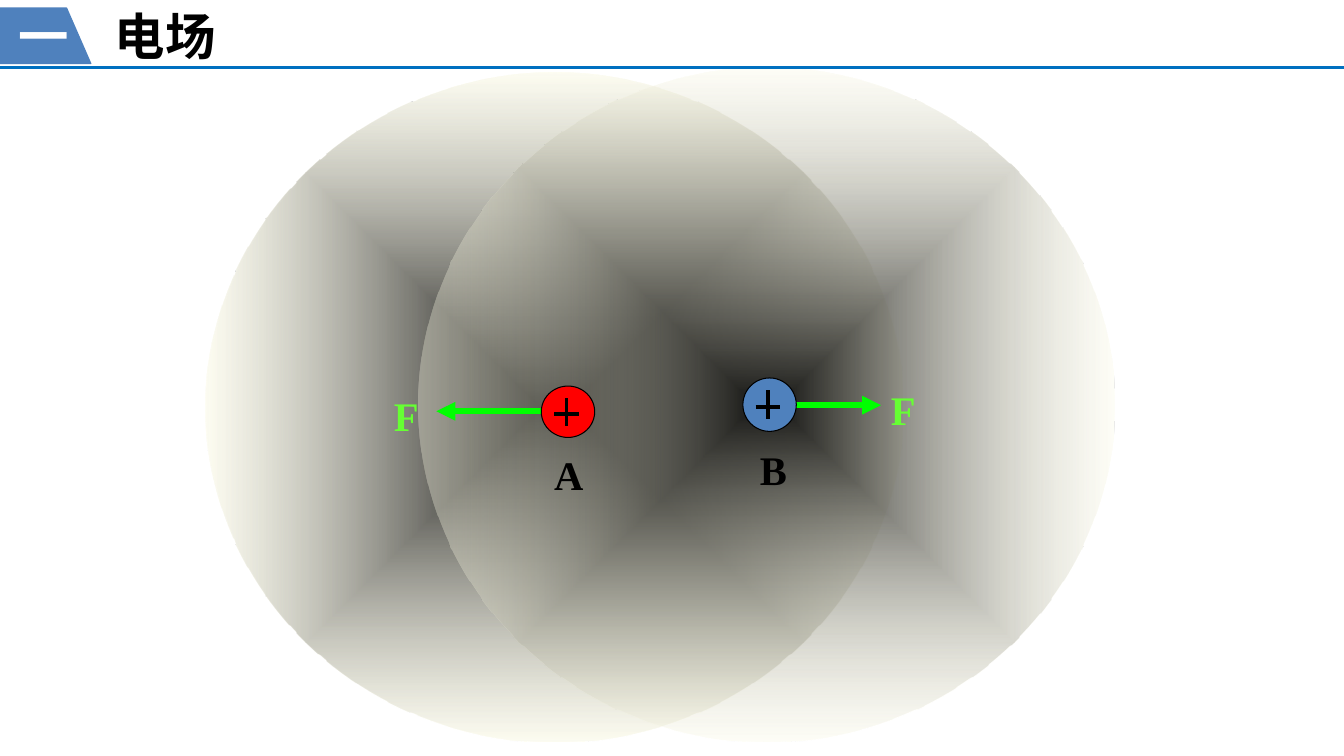
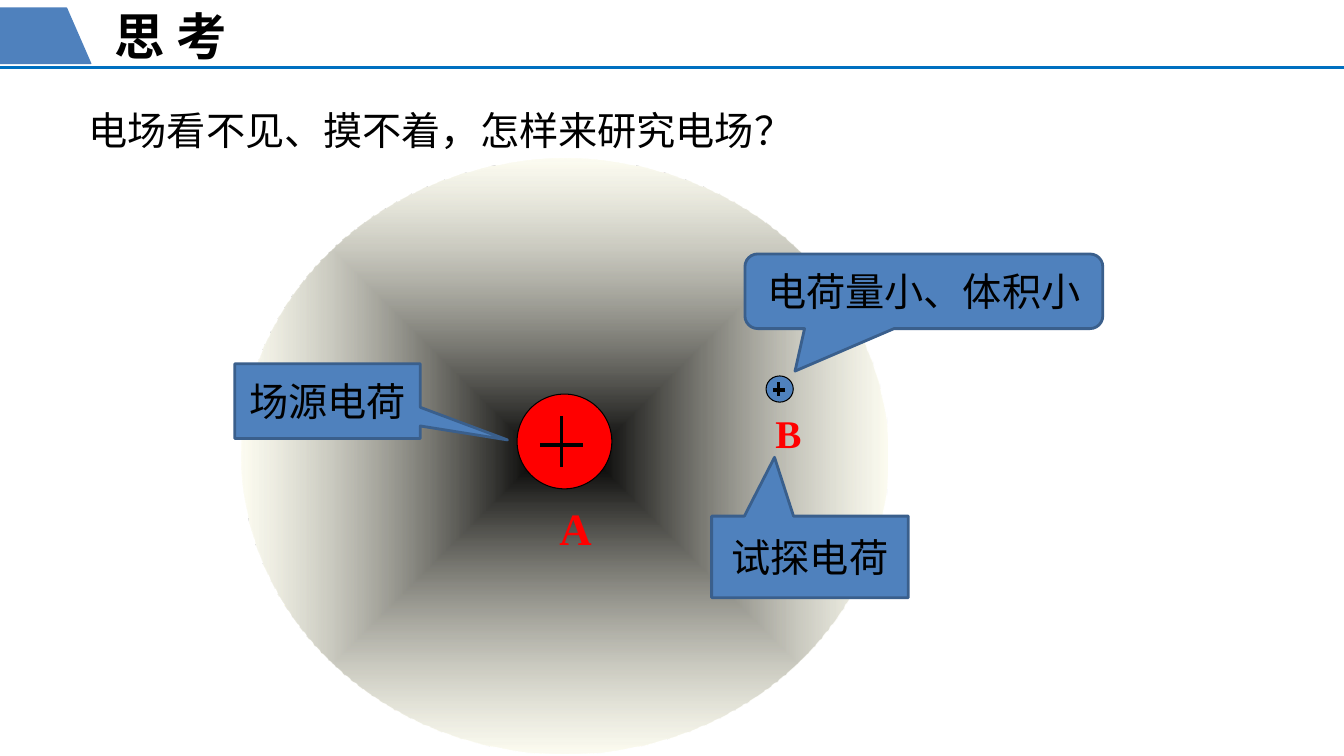
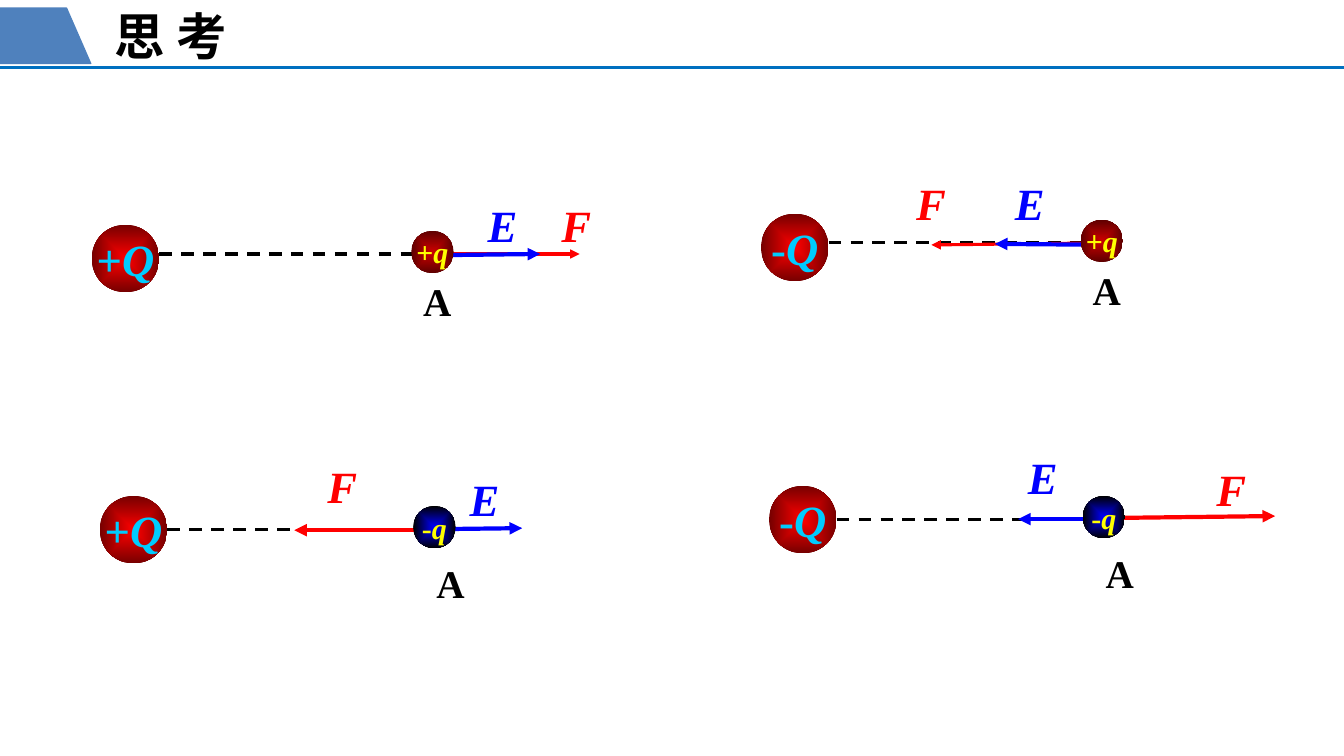
from dataclasses import dataclass
from typing import NamedTuple

from lxml.etree import SubElement
from pptx import Presentation
from pptx.dml.color import RGBColor
from pptx.enum.dml import MSO_LINE_DASH_STYLE as Dash
from pptx.enum.shapes import MSO_AUTO_SHAPE_TYPE as ShapeType, MSO_CONNECTOR_TYPE as ConnectorType
from pptx.enum.text import MSO_ANCHOR as Anchor, MSO_AUTO_SIZE as AutoSize, PP_ALIGN as Align
from pptx.oxml import parse_xml
from pptx.oxml.ns import nsdecls, qn
from pptx.shapes.autoshape import Shape
from pptx.slide import Slide
from pptx.text.text import TextFrame
from pptx.util import Emu, Inches, Pt

# The grid has square cells, ten to the inch.
COLUMNS, ROWS = 133.33, 75

BLUE, RULE_BLUE, CALLOUT_EDGE = "4F81BD", "0070C0", "3A5F8C"
BLACK, WHITE, RED, GREEN, LIME = "000000", "FFFFFF", "FF0000", "00FF00", "66FF33"
FIELD_BLUE, CYAN, YELLOW, IVORY = "0000FF", "00CCFF", "FFFF00", "FBFAE5"
SERIF, SANS, NUMERAL_FONT = "Times New Roman", "Arial", "Montserrat"


class Box(NamedTuple):
    left: float
    top: float
    width: float
    height: float


class Stop(NamedTuple):
    color: str
    opacity: int = 100


class Run(NamedTuple):
    text: str
    size: float
    color: str = BLACK
    bold: bool = True
    italic: bool = False
    font: str = SERIF


class Arrow(NamedTuple):
    x1: float
    y1: float
    x2: float
    y2: float
    width: float = 3


@dataclass(frozen=True)
class Charge:
    """A positive point charge with its name below."""
    body: Box
    color: str
    name: Run
    name_box: Box


@dataclass(frozen=True)
class Callout:
    kind: ShapeType
    box: Box
    adjustments: tuple[float, ...]
    text: str


@dataclass(frozen=True)
class RowLayout:
    """Offsets from the corner of the source charge."""
    axis_y: float
    probe: tuple[float, float]
    point_name: tuple[float, float]


@dataclass(frozen=True)
class ForceCase:
    source_sign: str
    probe_sign: str
    corner: tuple[float, float]
    layout: RowLayout
    force: Arrow
    field: Arrow
    force_name: tuple[float, float]
    field_name: tuple[float, float]


def grid(cells: float) -> Emu:
    return Inches(cells / 10)


def place(box: Box) -> list[Emu]:
    return [grid(cells) for cells in box]


def rgb(color: str) -> RGBColor:
    return RGBColor.from_string(color)


def write(frame: TextFrame, runs: list[Run], align: Align = Align.LEFT,
          line_spacing: float | None = None) -> None:
    paragraph = frame.paragraphs[0]
    paragraph.alignment = align
    if line_spacing:
        paragraph.line_spacing = line_spacing
    for item in runs:
        run = paragraph.add_run()
        run.text = item.text
        font = run.font
        font.name, font.size = item.font, Pt(item.size)
        font.bold, font.italic = item.bold, item.italic
        font.color.rgb = rgb(item.color)


def set_margins(frame: TextFrame) -> None:
    frame.margin_left = frame.margin_right = Inches(0.12)
    frame.margin_top = frame.margin_bottom = Inches(0.06)


def add_text(slide: Slide, box: Box, run: Run, wrap: bool = True, grow: bool = True,
             line_spacing: float | None = None) -> TextFrame:
    frame = slide.shapes.add_textbox(*place(box)).text_frame
    frame.word_wrap = wrap
    frame.auto_size = AutoSize.SHAPE_TO_FIT_TEXT if grow else AutoSize.NONE
    write(frame, [run], line_spacing=line_spacing)
    return frame


def paint(shape: Shape, fill: str, line: str, width: float) -> None:
    shape.shadow.inherit = False
    shape.fill.solid()
    shape.fill.fore_color.rgb = rgb(fill)
    shape.line.color.rgb = rgb(line)
    shape.line.width = Pt(width)


def add_glow(slide: Slide, box: Box, inner: Stop, outer: Stop) -> Shape:
    """Draw an ellipse shaded from its centre to its edge."""
    ellipse = slide.shapes.add_shape(ShapeType.OVAL, *place(box))
    ellipse.shadow.inherit = False
    ellipse.line.fill.background()
    stops = "".join(
        f'<a:gs pos="{position}"><a:srgbClr val="{stop.color}">'
        f'<a:alpha val="{stop.opacity * 1000}"/></a:srgbClr></a:gs>'
        for position, stop in ((0, inner), (100000, outer)))
    gradient = parse_xml(
        f'<a:gradFill {nsdecls("a")} rotWithShape="1"><a:gsLst>{stops}</a:gsLst>'
        '<a:path path="shape"><a:fillToRect l="50000" t="50000" r="50000" b="50000"/>'
        '</a:path></a:gradFill>')
    ellipse.element.spPr.find(qn("a:prstGeom")).addnext(gradient)
    return ellipse


def add_line(slide: Slide, path_ends: Arrow, color: str, head: bool = False,
             dashed: bool = False) -> None:
    ends = [grid(cells) for cells in path_ends[:4]]
    connector = slide.shapes.add_connector(ConnectorType.STRAIGHT, *ends)
    connector.line.color.rgb = rgb(color)
    connector.line.width = Pt(path_ends.width)
    if dashed:
        connector.line.dash_style = Dash.DASH
    properties = connector.element.spPr
    if head:
        SubElement(properties.find(qn("a:ln")), qn("a:tailEnd"), type="triangle")
    SubElement(properties, qn("a:effectLst"))


def add_header(slide: Slide, title: str, numeral: str = "") -> None:
    add_text(slide, Box(10.4, 0, 111.4, 5.8), Run(title, 36), grow=False)
    builder = slide.shapes.build_freeform(grid(0), grid(0.8))
    corners = [(6.6, 0.8), (9, 6.3), (0, 6.3)]
    builder.add_line_segments([(grid(x), grid(y)) for x, y in corners])
    paint(builder.convert_to_shape(), BLUE, BLUE, 1)
    add_line(slide, Arrow(0, 6.7, COLUMNS, 6.7, 1.5), RULE_BLUE)
    if numeral:
        add_text(slide, Box(0.9, 0, 6.7, 4.6), Run(numeral, 36, WHITE, font=NUMERAL_FONT),
                 grow=False)


def add_charge(slide: Slide, charge: Charge) -> None:
    left, top, width, height = charge.body
    circle = slide.shapes.add_shape(ShapeType.OVAL, *place(charge.body))
    paint(circle, charge.color, BLACK, 0.75)
    center_x, center_y = left + 0.47 * width, top + height / 2
    bar_y = center_y + 0.04 * height
    arm_x, arm_y = 0.23 * width, 0.27 * height
    add_line(slide, Arrow(center_x - arm_x, bar_y, center_x + arm_x, bar_y), BLACK)
    add_line(slide, Arrow(center_x, center_y - arm_y, center_x, center_y + arm_y, 2.25), BLACK)
    add_text(slide, charge.name_box, charge.name)


def add_callout(slide: Slide, callout: Callout) -> None:
    shape = slide.shapes.add_shape(callout.kind, *place(callout.box))
    for index, value in enumerate(callout.adjustments):
        shape.adjustments[index] = value
    paint(shape, BLUE, CALLOUT_EDGE, 2)
    frame = shape.text_frame
    frame.word_wrap, frame.vertical_anchor = True, Anchor.MIDDLE
    set_margins(frame)
    write(frame, [Run(callout.text, 28, bold=False)], Align.CENTER)


def add_ball(slide: Slide, box: Box, colors: tuple[str, str], sign: str, letter: str,
             size: float, text_color: str) -> None:
    ball = add_glow(slide, box, Stop(colors[0]), Stop(colors[1]))
    frame = ball.text_frame
    frame.word_wrap, frame.vertical_anchor = False, Anchor.MIDDLE
    write(frame, [Run(sign, size, text_color), Run(letter, size, text_color, italic=True)],
          Align.CENTER)


def add_force_case(slide: Slide, case: ForceCase) -> None:
    left, top = case.corner
    layout = case.layout
    source_size, probe_size, dash_length = 6.7, 4.2, 26.6
    dash_left, axis_y = left + source_size, top + layout.axis_y
    add_line(slide, Arrow(dash_left, axis_y, dash_left + dash_length, axis_y, 2.25), BLACK,
             dashed=True)
    vectors = (("F", case.force, case.force_name, RED),
               ("E", case.field, case.field_name, FIELD_BLUE))
    for letter, arrow, corner, color in vectors:
        add_line(slide, arrow, color, head=True)
        add_text(slide, Box(*corner, 5, 6.4), Run(letter, 31.9, color, italic=True), wrap=False)
    add_ball(slide, Box(left, top, source_size, source_size), (RED, "760000"),
             case.source_sign, "Q", 31.9, CYAN)
    probe_colors = ("CC0000", "5E0000") if case.probe_sign == "+" else (FIELD_BLUE, BLACK)
    probe_x, probe_y = layout.probe
    add_ball(slide, Box(left + probe_x, top + probe_y, probe_size, probe_size), probe_colors,
             case.probe_sign, "q", 21.4, YELLOW)
    name_x, name_y = layout.point_name
    add_text(slide, Box(left + name_x, top + name_y, 5.8, 5.7), Run("A", 28))


def build_field_slide(slide: Slide) -> None:
    add_glow(slide, Box(20.4, 7.2, 69.1, 66.4), Stop(BLACK), Stop(IVORY, 52))
    add_glow(slide, Box(41.5, 6.7, 69.1, 66.9), Stop("181816"), Stop(IVORY, 32))
    forces = ((Arrow(77.4, 40.2, 87.4, 40.2, 4.5), Box(87.4, 37.7, 7.8, 5.9)),
              (Arrow(53.7, 40.8, 43.3, 40.8, 4.5), Box(38.1, 38.3, 5.2, 5.9)))
    for arrow, name_box in forces:
        add_line(slide, arrow, GREEN, head=True)
        add_text(slide, name_box, Run("F", 29, LIME))
    charges = (
        Charge(Box(73.7, 37.5, 5.3, 5.3), BLUE, Run("B", 29), Box(74.4, 43.6, 3.3, 5.9)),
        Charge(Box(53.7, 38.3, 5.3, 5.1), RED, Run("A", 29), Box(54, 44.1, 3.3, 4.7)))
    for charge in charges:
        add_charge(slide, charge)
    add_header(slide, "电场", "一")


def build_probe_slide(slide: Slide) -> None:
    add_header(slide, "思 考")
    question = Run("电场看不见、摸不着，怎样来研究电场？", 28, bold=False, font=SANS)
    set_margins(add_text(slide, Box(7.6, 7.6, 85.9, 7.4), question, line_spacing=1.5))
    add_glow(slide, Box(24, 15.7, 64, 59), Stop(BLACK), Stop(IVORY, 52))
    charges = (
        Charge(Box(76, 37.3, 2.7, 2.6), BLUE, Run("B", 28, RED), Box(76.2, 40.1, 1.7, 5.7)),
        Charge(Box(51.3, 39.1, 9.4, 9.4), RED, Run("A", 32, RED), Box(54.5, 49.2, 5.8, 6.4)))
    for charge in charges:
        add_charge(slide, charge)
    rounded, square = ShapeType.ROUNDED_RECTANGULAR_CALLOUT, ShapeType.RECTANGULAR_CALLOUT
    callouts = (
        Callout(rounded, Box(73.9, 25.2, 35.5, 7.4), (-0.36, 1.07, 0.17), "电荷量小、体积小"),
        Callout(square, Box(23.3, 36.1, 18.4, 7.4), (0.97, 0.52), "场源电荷"),
        Callout(square, Box(70.6, 51.2, 19.5, 8.1), (-0.18, -1.22), "试探电荷"))
    for callout in callouts:
        add_callout(slide, callout)


def build_direction_slide(slide: Slide) -> None:
    add_header(slide, "思 考")
    upper = RowLayout(2.9, (31.7, 0.6), (31.9, 4.7))
    lower = RowLayout(3.3, (31.1, 1), (32.4, 5.8))
    cases = (
        ForceCase("+", "+", (9.1, 22.3), upper, Arrow(44.9, 25.2, 57.5, 25.2, 2.25),
                  Arrow(44.9, 25.3, 53.6, 25.2), (54.7, 19.1), (47.4, 19.1)),
        ForceCase("-", "+", (75.5, 21.2), upper, Arrow(109.3, 24.1, 92.4, 24.3, 2.25),
                  Arrow(111.2, 24.3, 98.7, 24.2), (89.9, 17), (99.7, 17)),
        ForceCase("+", "-", (9.9, 49.2), lower, Arrow(42.3, 52.6, 29.2, 52.6),
                  Arrow(43, 52.5, 51.8, 52.4), (31.5, 45), (45.6, 46.3)),
        ForceCase("-", "-", (76.3, 48.2), lower, Arrow(109.3, 51.4, 126.5, 51.2),
                  Arrow(109.4, 51.5, 101, 51.5), (119.7, 45.3), (101, 44.1)))
    for case in cases:
        add_force_case(slide, case)


def main() -> None:
    presentation = Presentation()
    presentation.slide_width, presentation.slide_height = grid(COLUMNS), grid(ROWS)
    blank = presentation.slide_layouts[6]
    for build in (build_field_slide, build_probe_slide, build_direction_slide):
        build(presentation.slides.add_slide(blank))
    presentation.save("out.pptx")


if __name__ == "__main__":
    main()
